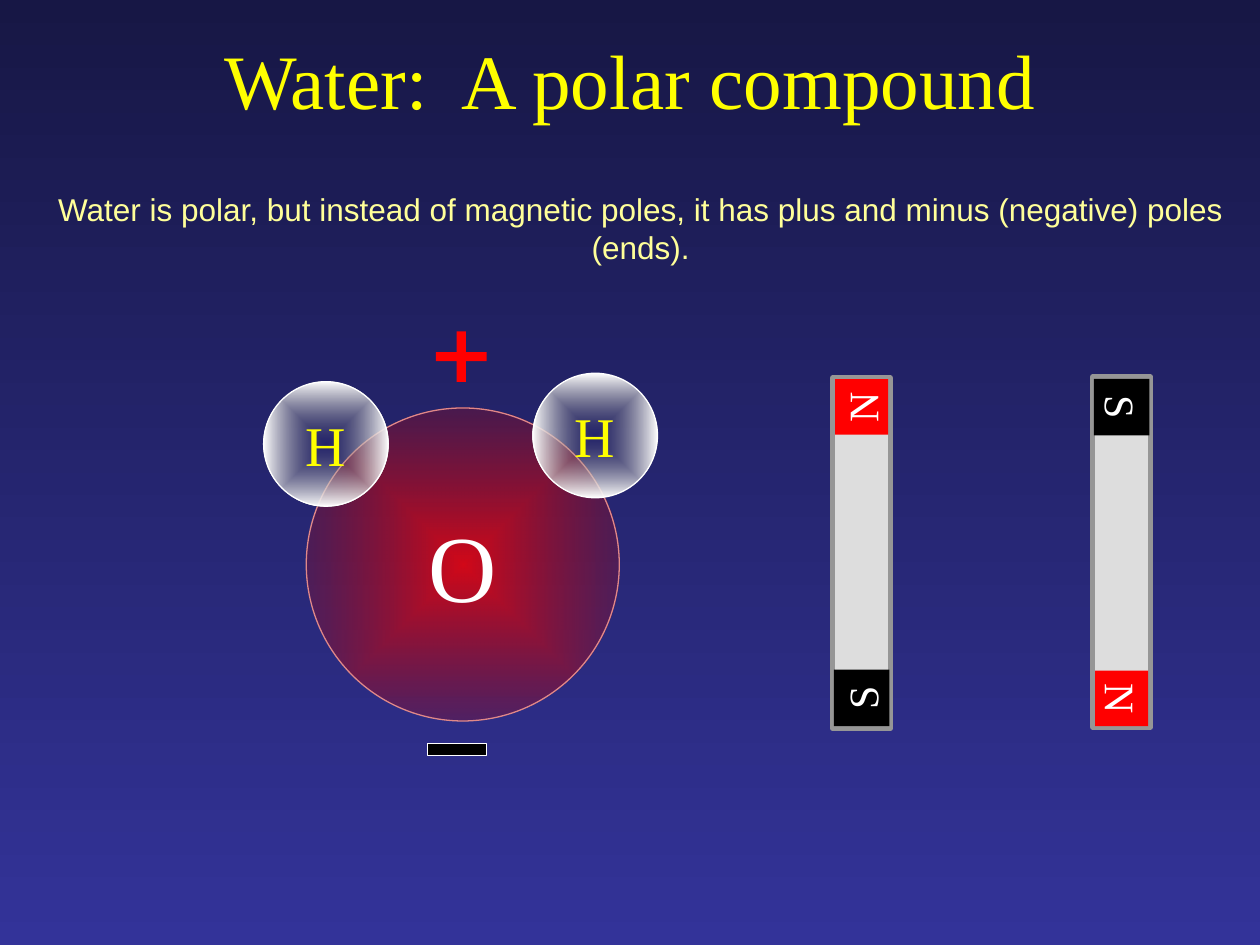
from dataclasses import dataclass

from lxml import etree
from pptx import Presentation
from pptx.dml.color import RGBColor
from pptx.enum.shapes import MSO_SHAPE
from pptx.enum.text import MSO_ANCHOR, PP_ALIGN
from pptx.oxml.ns import qn
from pptx.util import Cm, Pt


@dataclass(frozen=True)
class Theme:
    serif: str = "Times New Roman"
    sans: str = "Arial"
    sky_top: str = "171745"
    sky_bottom: str = "333399"
    yellow: str = "FFFF00"
    pale_yellow: str = "FFFF99"
    white: str = "FFFFFF"
    black: str = "000000"
    red: str = "FF0000"
    oxygen_rim: str = "E08888"
    bar: str = "DDDDDD"
    bar_edge: str = "969696"
    title_size: int = 44
    body_size: int = 18
    oxygen_size: int = 54
    hydrogen_size: int = 32
    pole_size: int = 24
    thin: float = 0.75
    thick: float = 3


THEME = Theme()

# Positions and lengths are in centimetres; shapes are placed by their centres.
TITLE = "Water:  A polar compound"
EXPLANATION = ("Water is polar, but instead of magnetic poles, "
               "it has plus and minus (negative) poles (ends).")

# Gradient stops run from the centre outwards: (colour, opacity in percent)
OXYGEN_GLOW = [(THEME.red, 79), ("B60000", 25)]
HYDROGEN_GLOW = [("666666", 0), (THEME.white, 100)]
ATOMS = [  # symbol, centre, diameter, glow, rim, letter size, letter colour
    ("O", (9.33, 11.38), 6.31, OXYGEN_GLOW, THEME.oxygen_rim, THEME.oxygen_size, THEME.white),
    ("H", (12, 8.78), 2.51, HYDROGEN_GLOW, THEME.white, THEME.hydrogen_size, THEME.yellow),
    ("H", (6.57, 8.95), 2.51, HYDROGEN_GLOW, THEME.white, THEME.hydrogen_size, THEME.yellow),
]

BAR_SIZE = (7.06, 1.17)
POLES = [  # letter, size, distance from the bar's centre, colour
    ("N", (1.12, 1.07), 2.95, THEME.red),
    ("S", (1.14, 1.12), -2.92, THEME.black),
]
MAGNETS = [((17.37, 11.15), 270), ((22.61, 11.13), 90)]  # centre, rotation


def add_centred(shapes, preset, centre, size, fill=None, line=None, line_width=THEME.thin):
    (x, y), (width, height) = centre, size
    shape = shapes.add_shape(preset, Cm(x - width / 2), Cm(y - height / 2),
                             Cm(width), Cm(height))
    shape.shadow.inherit = False
    if fill:
        shape.fill.solid()
        shape.fill.fore_color.rgb = RGBColor.from_string(fill)
    if line:
        shape.line.color.rgb = RGBColor.from_string(line)
        shape.line.width = Pt(line_width)
    else:
        shape.line.fill.background()
    return shape


def write(shape, text, font, size, color, anchor=MSO_ANCHOR.MIDDLE, wrap=False):
    frame = shape.text_frame
    frame.text = text
    frame.word_wrap = wrap
    frame.vertical_anchor = anchor
    paragraph = frame.paragraphs[0]
    paragraph.alignment = PP_ALIGN.CENTER
    style = paragraph.runs[0].font
    style.name, style.size = font, Pt(size)
    style.color.rgb = RGBColor.from_string(color)


def glow(shape, stops):
    """Fill the shape with a gradient that spreads from its centre."""
    shape.fill.gradient()
    gradient = shape._element.spPr.find(qn("a:gradFill"))
    for child in list(gradient):
        gradient.remove(child)
    stop_list = etree.SubElement(gradient, qn("a:gsLst"))
    for position, (color, opacity) in zip((0, 100000), stops):
        stop = etree.SubElement(stop_list, qn("a:gs"), pos=str(position))
        rgb = etree.SubElement(stop, qn("a:srgbClr"), val=color)
        etree.SubElement(rgb, qn("a:alpha"), val=str(opacity * 1000))
    spread = etree.SubElement(gradient, qn("a:path"), path="shape")
    etree.SubElement(spread, qn("a:fillToRect"), l="50000", t="50000", r="50000", b="50000")


def paint_background(slide):
    fill = slide.background.fill
    fill.gradient()
    fill.gradient_angle = 270
    for stop, color in zip(fill.gradient_stops, (THEME.sky_top, THEME.sky_bottom)):
        stop.color.rgb = RGBColor.from_string(color)


def add_molecule(slide):
    molecule = slide.shapes.add_group_shape()
    for symbol, centre, diameter, stops, rim, size, color in ATOMS:
        atom = add_centred(molecule.shapes, MSO_SHAPE.OVAL, centre,
                           (diameter, diameter), line=rim)
        glow(atom, stops)
        write(atom, symbol, THEME.serif, size, color)


def add_magnet(slide, centre, rotation):
    magnet = slide.shapes.add_group_shape()
    bar = add_centred(magnet.shapes, MSO_SHAPE.RECTANGLE, centre, BAR_SIZE,
                      THEME.bar, THEME.bar_edge, THEME.thick)
    bar.rotation = rotation
    direction = 1 if rotation == 90 else -1
    x, y = centre
    for letter, size, distance, color in POLES:
        pole = add_centred(magnet.shapes, MSO_SHAPE.RECTANGLE,
                           (x, y + direction * distance), size, color)
        pole.rotation = rotation
        write(pole, letter, THEME.serif, THEME.pole_size, THEME.white)


def main():
    deck = Presentation()
    deck.slide_width, deck.slide_height = Cm(25.4), Cm(19.05)
    slide = deck.slides.add_slide(deck.slide_layouts[6])
    paint_background(slide)

    title = slide.shapes.add_textbox(Cm(1.9), Cm(0), Cm(21.6), Cm(3.18))
    write(title, TITLE, THEME.serif, THEME.title_size, THEME.yellow, wrap=True)

    add_molecule(slide)
    plus = add_centred(slide.shapes, MSO_SHAPE.CROSS, (9.3, 7.19), (1.02, 1.02), THEME.red)
    plus.adjustments[0] = 0.41
    add_centred(slide.shapes, MSO_SHAPE.RECTANGLE, (9.21, 15.11), (1.19, 0.25),
                THEME.black, THEME.white)
    for centre, rotation in MAGNETS:
        add_magnet(slide, centre, rotation)

    explanation = slide.shapes.add_textbox(Cm(0.43), Cm(3.71), Cm(24.97), Cm(1.8))
    write(explanation, EXPLANATION, THEME.sans, THEME.body_size, THEME.pale_yellow,
          MSO_ANCHOR.TOP, wrap=True)

    deck.save("out.pptx")


if __name__ == "__main__":
    main()
